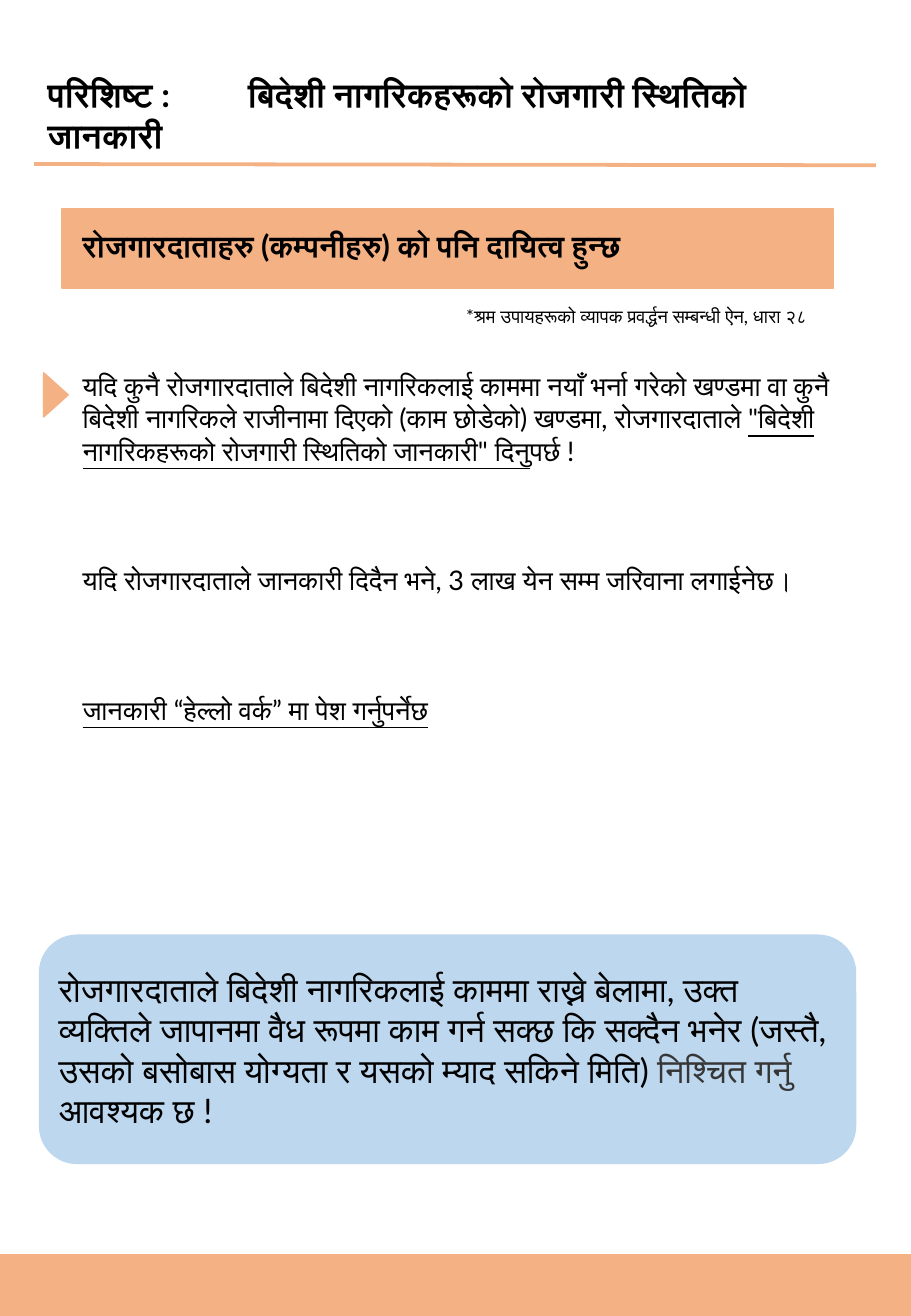
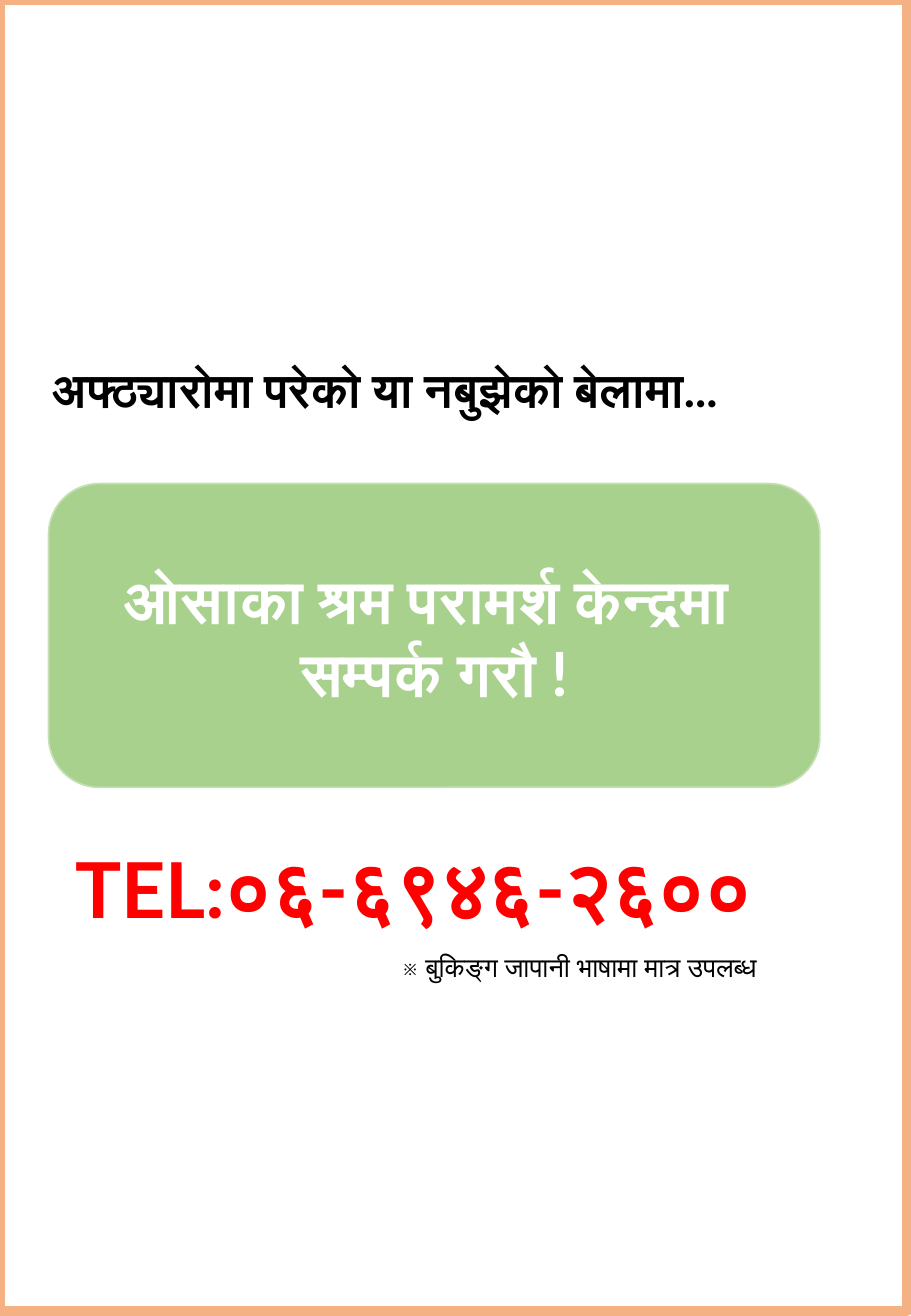
from dataclasses import dataclass

from lxml import etree
from pptx import Presentation
from pptx.dml.color import RGBColor
from pptx.enum import shapes as kinds, text as t
from pptx.oxml.ns import qn
from pptx.util import Inches, Pt


@dataclass(frozen=True)
class Theme:
    font: str = "Lato"
    ink: str = "000000"
    soft_ink: str = "363636"
    paper: str = "FFFFFF"
    orange: str = "F4B183"
    blue: str = "BDD7EE"
    green: str = "A9D18E"
    pale_green: str = "C5E0B4"
    red: str = "FF0000"
    note: float = 11
    body: float = 16
    banner: float = 18
    heading: float = 20
    question: float = 28
    action: float = 36
    phone_label: float = 45.7
    phone: float = 48


THEME = Theme()
WIDTH, HEIGHT = 7.5, 10.83


def write(shape, paragraphs, size, box=None, color=THEME.ink, bold=False,
          align=t.PP_ALIGN.LEFT, anchor=t.MSO_ANCHOR.TOP, spacing=1.0,
          gap=0, inset=(0.1, 0.05), fit=True):
    """Fill a shape with paragraphs of (text, overrides) runs.

    Overrides may hold size, color and underline; gap is the space
    in points between paragraphs; box moves the shape.
    """
    if box:
        shape.left, shape.top, shape.width, shape.height = map(Inches, box)
    frame = shape.text_frame
    frame.word_wrap = True
    frame.auto_size = t.MSO_AUTO_SIZE.SHAPE_TO_FIT_TEXT if fit else t.MSO_AUTO_SIZE.NONE
    frame.vertical_anchor = anchor
    frame.margin_left = frame.margin_right = Inches(inset[0])
    frame.margin_top = frame.margin_bottom = Inches(inset[1])
    for number, runs in enumerate(paragraphs):
        paragraph = frame.add_paragraph() if number else frame.paragraphs[0]
        paragraph.alignment = align
        paragraph.line_spacing = spacing
        paragraph.space_before = Pt(gap if number else 0)
        for words, overrides in runs:
            run = paragraph.add_run()
            run.text = words
            font = run.font
            font.name = THEME.font
            font.size = Pt(overrides.get("size", size))
            font.bold = bold
            font.underline = overrides.get("underline", False)
            font.color.rgb = RGBColor.from_string(overrides.get("color", color))
            # Devanagari takes its face from the complex-script font
            etree.SubElement(font._element, qn("a:cs"), typeface=THEME.font)


def add_block(slide, kind, box, fill, line=None, line_width=1):
    block = slide.shapes.add_shape(kind, *map(Inches, box))
    block.shadow.inherit = False
    block.fill.solid()
    block.fill.fore_color.rgb = RGBColor.from_string(fill)
    if line:
        block.line.color.rgb = RGBColor.from_string(line)
        block.line.width = Pt(line_width)
    else:
        block.line.fill.background()
    return block


deck = Presentation()
deck.slide_width, deck.slide_height = Inches(WIDTH), Inches(HEIGHT)
TITLE_AND_BODY, TITLE_ONLY = deck.slide_layouts[1], deck.slide_layouts[5]
RECTANGLE = kinds.MSO_SHAPE.RECTANGLE
ROUNDED = kinds.MSO_SHAPE.ROUNDED_RECTANGLE
UNDERLINED = {"underline": True}

# Slide 1: reporting the employment of foreign nationals
report = deck.slides.add_slide(TITLE_AND_BODY)

heading = report.shapes.title
write(heading, [[("परिशिष्ट :\tबिदेशी नागरिकहरूको रोजगारी स्थितिको जानकारी", {})]],
      THEME.heading, (0.29, 0.56, 6.76, 0.77), bold=True)
tab_stops = etree.SubElement(
    heading.text_frame.paragraphs[0]._p.get_or_add_pPr(), qn("a:tabLst"))
etree.SubElement(tab_stops, qn("a:tab"), pos=str(Inches(1.65)), algn="l")

heading_rule = report.shapes.add_connector(
    kinds.MSO_CONNECTOR.STRAIGHT,
    Inches(0.28), Inches(1.35), Inches(7.21), Inches(1.36))
heading_rule.line.color.rgb = RGBColor.from_string(THEME.orange)
heading_rule.line.width = Pt(2.25)
etree.SubElement(heading_rule._element.spPr, qn("a:effectLst"))

duties = report.placeholders[1]
write(duties, [
    [("यदि कुनै रोजगारदाताले बिदेशी नागरिकलाई काममा नयाँ भर्ना गरेको खण्डमा वा कुनै "
      "बिदेशी नागरिकले राजीनामा दिएको (काम छोडेको) खण्डमा, रोजगारदाताले ", {}),
     ("\"बिदेशी नागरिकहरूको रोजगारी स्थितिको जानकारी\" दिनु", UNDERLINED),
     ("पर्छ !", {})],
    [("यदि रोजगारदाताले जानकारी दिदैन भने, 3 लाख येन सम्म जरिवाना लगाईनेछ।", {})],
    [("जानकारी “हेल्लो वर्क” मा पेश गर्नुपर्नेछ", UNDERLINED)],
], THEME.body, (0.58, 2.99, 6.54, 3.6), gap=57.6, fit=False)
for paragraph in duties.text_frame.paragraphs:
    properties = paragraph._p.get_or_add_pPr()
    properties.set("marL", "0")
    properties.set("indent", "0")
    etree.SubElement(properties, qn("a:buNone"))

add_block(report, RECTANGLE, (0.51, 1.72, 6.35, 0.65), THEME.orange, THEME.orange, 0.75)
write(report.shapes.add_textbox(0, 0, 0, 0),
      [[("रोजगारदाताहरु (कम्पनीहरु) को पनि दायित्व हुन्छ", {})]],
      THEME.banner, (0.58, 1.82, 6.04, 0.4), bold=True)
write(report.shapes.add_textbox(0, 0, 0, 0),
      [[("*श्रम उपायहरूको व्यापक प्रवर्द्धन सम्बन्धी ऐन, धारा २८", {})]],
      THEME.note, (3.74, 2.46, 3.47, 0.29))

pointer = add_block(report, kinds.MSO_SHAPE.ISOSCELES_TRIANGLE,
                    (0.28, 3.15, 0.36, 0.2), THEME.orange, THEME.orange)
pointer.rotation = 90

status_check = add_block(report, ROUNDED, (0.32, 7.69, 6.73, 1.89), THEME.blue)
write(status_check, [[
    ("रोजगारदाताले बिदेशी नागरिकलाई काममा राख्ने बेलामा, उक्त व्यक्तिले जापानमा वैध "
     "रूपमा काम गर्न सक्छ कि सक्दैन भनेर (जस्तै, उसको बसोबास योग्यता र यसको म्याद "
     "सकिने मिति) ", {}),
    ("निश्चित गर्नु ", {"color": THEME.soft_ink}),
    ("आवश्यक छ !", {}),
]], THEME.heading, anchor=t.MSO_ANCHOR.MIDDLE, inset=(0.07, 0.03), fit=False)

add_block(report, RECTANGLE, (0, HEIGHT - 0.5, WIDTH, 0.5), THEME.orange, THEME.orange)

# Slide 2: where to ask for advice
contact = deck.slides.add_slide(TITLE_ONLY)
page_frame = add_block(contact, RECTANGLE, (0, 0, 7.47, 10.79),
                       THEME.paper, THEME.orange, 6)
contact.shapes.element.insert(2, page_frame._element)  # behind the title

write(contact.shapes.title, [[("अफ्ठ्यारोमा परेको या नबुझेको बेलामा...", {})]],
      THEME.question, (0.4, 2.72, 7.1, 0.72), bold=True,
      anchor=t.MSO_ANCHOR.MIDDLE, spacing=1.5, inset=(0.03, 0.05))

advice_centre = add_block(contact, ROUNDED, (0.4, 3.98, 6.35, 2.5),
                          THEME.green, THEME.pale_green)
write(advice_centre,
      [[("ओसाका श्रम परामर्श केन्द्रमा ", {})], [("सम्पर्क गरौ !", {})]],
      THEME.action, color=THEME.paper, bold=True, align=t.PP_ALIGN.CENTER,
      anchor=t.MSO_ANCHOR.MIDDLE, fit=False)

write(contact.shapes.add_textbox(0, 0, 0, 0),
      [[("TEL:", {"size": THEME.phone_label}), ("०६-६९४६-२६००", {})]],
      THEME.phone, (0.59, 6.51, 6.9, 1.16), color=THEME.red, bold=True,
      anchor=t.MSO_ANCHOR.MIDDLE, spacing=1.5, inset=(0.03, 0.05))
write(contact.shapes.add_textbox(0, 0, 0, 0),
      [[("※ बुकिङ्ग जापानी भाषामा मात्र उपलब्ध", {})]],
      THEME.body, (3.21, 7.77, 3.54, 0.37))

deck.save("out.pptx")
